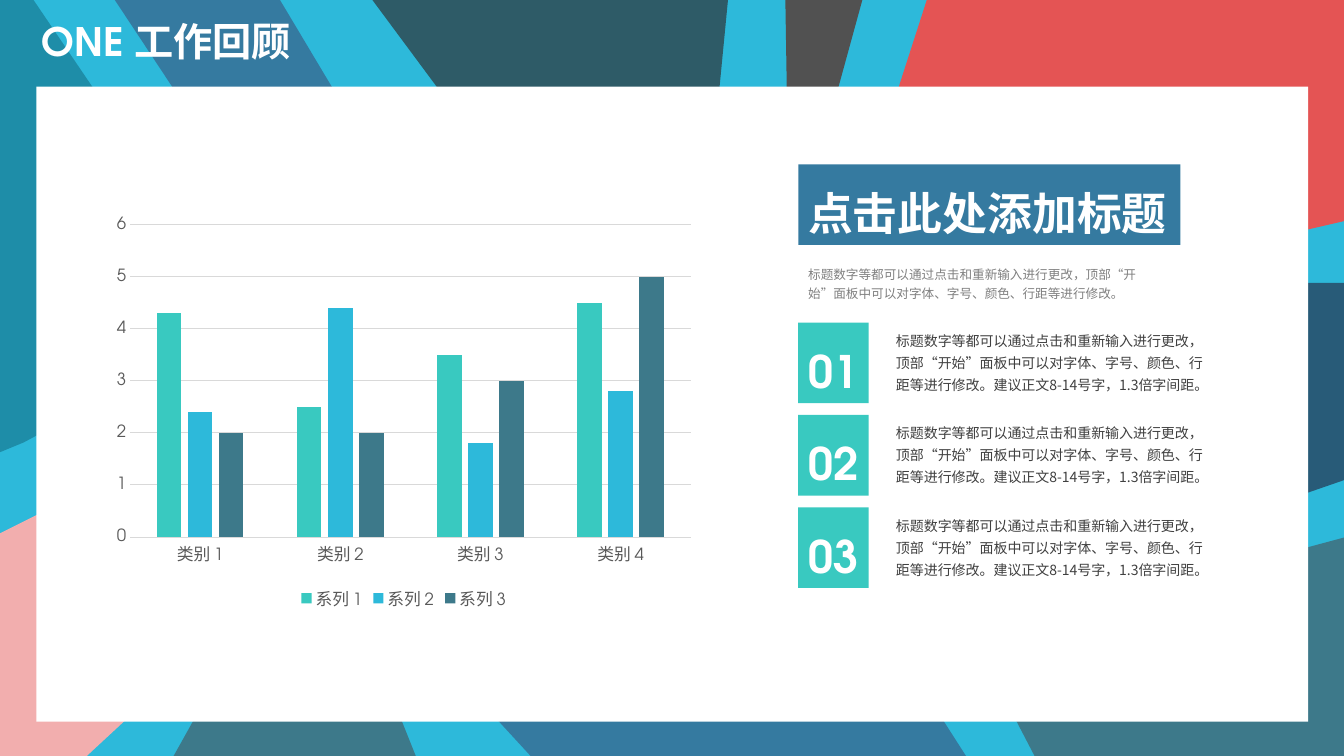
from pptx import Presentation
from pptx.chart.data import CategoryChartData
from pptx.dml.color import RGBColor
from pptx.enum.chart import XL_CHART_TYPE as ChartType, XL_LEGEND_POSITION as LegendPos, XL_TICK_MARK as Tick
from pptx.enum.shapes import MSO_SHAPE as Shape
from pptx.enum.text import MSO_ANCHOR as Anchor, MSO_AUTO_SIZE as AutoSize, PP_ALIGN as Align
from pptx.oxml.ns import qn
from pptx.util import Pt
from lxml.etree import SubElement

WHITE = RGBColor(0xFF, 0xFF, 0xFF)
SKY = RGBColor(0x2D, 0xB9, 0xDA)
TEAL = RGBColor(0x1E, 0x8D, 0xA8)
PINK = RGBColor(0xF2, 0xAE, 0xAE)
SLATE = RGBColor(0x3D, 0x79, 0x8A)
BLUE = RGBColor(0x35, 0x7A, 0xA0)
PINE = RGBColor(0x2E, 0x5B, 0x67)
CHARCOAL = RGBColor(0x51, 0x51, 0x51)
RED = RGBColor(0xE4, 0x54, 0x54)
NAVY = RGBColor(0x28, 0x5B, 0x78)
MINT = RGBColor(0x39, 0xC9, 0xC0)
INK = RGBColor(0x40, 0x40, 0x40)
GREY = RGBColor(0x80, 0x80, 0x80)
AXIS_TEXT = RGBColor(0x59, 0x59, 0x59)
GRID = RGBColor(0xD9, 0xD9, 0xD9)

DISPLAY = "TeX Gyre Adventor"
BODY = "Noto Sans CJK SC"

SUMMARY = "标题数字等都可以通过点击和重新输入进行更改，顶部“开始”面板中可以对字体、字号、颜色、行距等进行修改。"
DETAIL = SUMMARY + "建议正文8-14号字，1.3倍字间距。"

W, H = 960, 540
LEFT, TOP, RIGHT, BOTTOM = 26, 62, 934, 515


def write(tf, text, size, font, color, bold=False, spacing=1.3):
    p = tf.paragraphs[0]
    p.alignment = Align.LEFT
    p.line_spacing = spacing
    p.space_before = Pt(0)
    r = p.add_run()
    r.text = text
    r.font.size = Pt(size)
    r.font.name = font
    r.font.bold = bold
    r.font.color.rgb = color
    SubElement(r.font._element, qn("a:ea")).set("typeface", BODY)


def paint(sp, color):
    sp.shadow.inherit = False
    sp.fill.solid()
    sp.fill.fore_color.rgb = color
    sp.line.fill.background()


def add_block(s, box, color, text=None):
    sp = s.shapes.add_shape(Shape.RECTANGLE, *map(Pt, box))
    paint(sp, color)
    if text:
        tf = sp.text_frame
        tf.word_wrap = False
        tf.auto_size = AutoSize.SHAPE_TO_FIT_TEXT
        tf.vertical_anchor = Anchor.TOP
        write(tf, text, 32, DISPLAY, WHITE, True)


def add_note(s, box, text, size, color):
    tf = s.shapes.add_textbox(*map(Pt, box)).text_frame
    tf.word_wrap = True
    tf.auto_size = AutoSize.SHAPE_TO_FIT_TEXT
    write(tf, text, size, BODY, color)


def add_backdrop(s, box):
    x, y, w, h = box
    s.background.fill.solid()
    s.background.fill.fore_color.rgb = SKY
    blobs = [
        (TEAL, [(0, 0), (24, 0), (66, TOP), (196, 220), (17, 316), (0, 323)]),
        (PINK, [(227, 256), (89, BOTTOM), (62, H), (0, H), (0, 381), (LEFT, 368)]),
        (SLATE, [(253, 279), (287, BOTTOM), (297, H), (124, H), (138, BOTTOM)]),
        (BLUE, [(82, 0), (200, 0), (237, TOP), (674, BOTTOM), (690, H), (379, H), (356, BOTTOM), (123, TOP)]),
        (PINE, [(266, 0), (520, 0), (514, TOP), (558, 220), (312, TOP)]),
        (CHARCOAL, [(561, 0), (616, 0), (599, TOP), (595, 199), (562, TOP)]),
        (RED, [(662, 0), (W, 0), (W, 158), (RIGHT, 164), (629, 199), (642, TOP)]),
        (NAVY, [(RIGHT, 202), (W, 202), (W, 343), (RIGHT, 352), (633, 235)]),
        (SLATE, [(611, 258), (814, 404), (RIGHT, 391), (W, 384), (W, H), (739, H), (726, BOTTOM)]),
    ]
    for color, outline in blobs:
        points = [(Pt(x + px), Pt(y + py)) for px, py in outline]
        builder = s.shapes.build_freeform(*points[0])
        builder.add_line_segments(points[1:], close=True)
        paint(builder.convert_to_shape(), color)
    add_block(s, (x + 25.9, y + 61.9, w - 51.4, h - 86.4), WHITE)


def add_title(s, box):
    title = s.shapes.title
    title.element.getparent().append(title.element)
    title.left, title.top, title.width, title.height = map(Pt, box)
    tf = title.text_frame
    tf.word_wrap = True
    tf.auto_size = AutoSize.NONE
    tf.vertical_anchor = Anchor.MIDDLE
    write(tf, "ONE 工作回顾", 28, DISPLAY, WHITE, True, 0.9)


def style_font(font):
    font.size = Pt(12)
    font.name = DISPLAY
    font.color.rgb = AXIS_TEXT


def add_column_chart(s, box):
    data = CategoryChartData()
    data.categories = [f"类别 {i}" for i in range(1, 5)]
    data.add_series("系列 1", (4.3, 2.5, 3.5, 4.5))
    data.add_series("系列 2", (2.4, 4.4, 1.8, 2.8))
    data.add_series("系列 3", (2, 2, 3, 5))
    chart = s.shapes.add_chart(ChartType.COLUMN_CLUSTERED, *map(Pt, box), data).chart
    chart.has_title = False
    style_font(chart.font)
    chart.has_legend = True
    chart.legend.position = LegendPos.BOTTOM
    chart.legend.include_in_layout = False
    style_font(chart.legend.font)
    plot = chart.plots[0]
    plot.gap_width = 219
    plot.overlap = -27
    plot.vary_by_categories = False
    for series, color in zip(plot.series, (MINT, SKY, SLATE)):
        series.format.fill.solid()
        series.format.fill.fore_color.rgb = color
    for axis in (chart.category_axis, chart.value_axis):
        axis.major_tick_mark = axis.minor_tick_mark = Tick.NONE
        style_font(axis.tick_labels.font)
    values = chart.value_axis
    values.minimum_scale, values.maximum_scale, values.major_unit = 0, 6, 1
    values.format.line.fill.background()
    for line in (chart.category_axis.format.line, values.major_gridlines.format.line):
        line.color.rgb = GRID
        line.width = Pt(0.75)


def add_points(s, box):
    x, y, w, h = box
    tile_h, tile_w, pitch = 57.6, 50.4, 66
    add_block(s, (x, y, 272.9, tile_h), BLUE, "点击此处添加标题")
    add_note(s, (x, y + 66.2, 272.9, 35.3), SUMMARY, 9, GREY)
    first = y + h - tile_h - 2 * pitch
    for i in range(3):
        top = first + i * pitch
        add_block(s, (x, top, tile_w, tile_h), MINT, f"{i + 1:02}")
        add_note(s, (x + 62.7, top, w - 62.7, 54.7), DETAIL, 10, INK)


def main():
    prs = Presentation()
    prs.slide_width, prs.slide_height = Pt(W), Pt(H)
    s = prs.slides.add_slide(prs.slide_layouts[5])
    add_backdrop(s, (0, 0, W, H))
    add_title(s, (22.3, 7.9, 610.6, 46.8))
    add_column_chart(s, (74.9, 149, 427, 290.2))
    add_points(s, (570.2, 117.4, 298.1, 302.6))
    prs.save("out.pptx")


if __name__ == "__main__":
    main()
